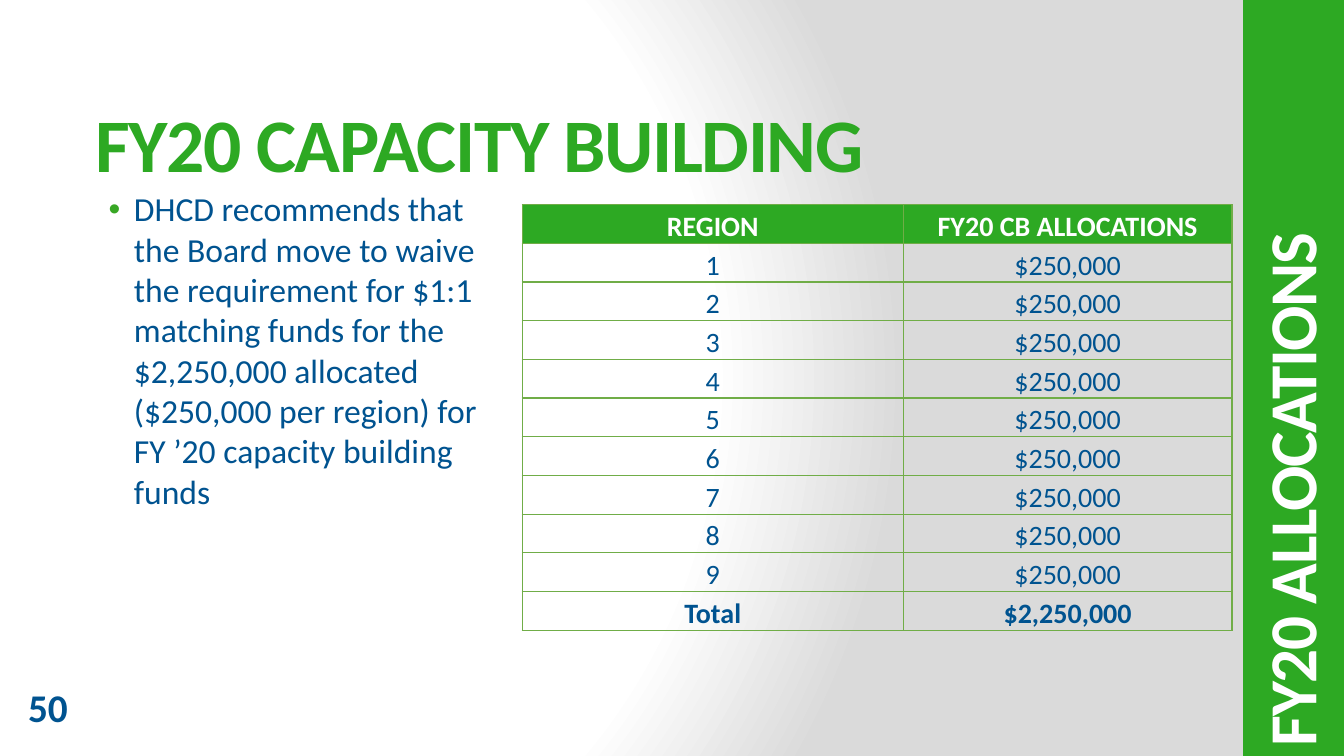
"""Build the FY20 capacity building allocations slide."""
from dataclasses import dataclass

from pptx import Presentation
from pptx.dml.color import RGBColor
from pptx.enum.shapes import MSO_SHAPE
from pptx.enum.text import MSO_ANCHOR as Anchor, PP_ALIGN as Align
from pptx.oxml import parse_xml
from pptx.oxml.ns import nsdecls
from pptx.slide import Slide
from pptx.table import _Cell as Cell
from pptx.util import Inches, Pt

GREEN, BLUE, WHITE = "2DA923", "005390", "FFFFFF"
BULLET_GREEN, BORDER_GREEN = "38A725", "70AD47"
BACKDROP_STOPS = ((0, WHITE), (75, WHITE), (100, "DADADA"))
REGIONS = 9
ALLOCATION = 250_000
COLUMN_WIDTHS = (3.78, 3.26)
ROW_HEIGHT = 0.36


@dataclass(frozen=True)
class Label:
    text: str
    left: float
    top: float
    width: float
    height: float
    size: float
    color: str
    bold: bool = True
    anchor: Anchor = Anchor.TOP
    rotation: float = 0
    spacing: float = 0
    bullet: str = ""


LABELS = (
    Label("50", 0.18, 6.73, 1.06, 0.57, 28, BLUE),
    Label("DHCD recommends that the Board move to waive the requirement for $1:1 "
          "matching funds for the $2,250,000 allocated ($250,000 per region) for "
          "FY ’20 capacity building funds",
          0.85, 1.82, 4.11, 4.63, 24, BLUE, bold=False, bullet="•"),
    Label("FY20 CAPACITY BUILDING", 0.85, 0.87, 11.49, 1.08, 54, GREEN,
          anchor=Anchor.MIDDLE, spacing=-1),
    Label("FY20 ALLOCATIONS", 9.04, 3.21, 7.5, 1.08, 48, WHITE,
          anchor=Anchor.MIDDLE, rotation=270, spacing=-1),
)


def rgb(color: str) -> RGBColor:
    return RGBColor.from_string(color)


def add_run(paragraph, text: str, size: float, color: str, bold: bool, spacing: float = 0) -> None:
    run = paragraph.add_run()
    run.text = text
    font = run.font
    font.name, font.size, font.bold = "Calibri", Pt(size), bold
    font.color.rgb = rgb(color)
    if spacing:
        run._r.get_or_add_rPr().set("spc", str(round(spacing * 100)))


def add_bullet(paragraph, mark: str) -> None:
    properties = paragraph._p.get_or_add_pPr()
    properties.set("marL", str(Inches(0.38)))
    properties.set("indent", str(Inches(-0.25)))
    for element in (f'<a:buClr {nsdecls("a")}><a:srgbClr val="{BULLET_GREEN}"/></a:buClr>',
                    f'<a:buFont {nsdecls("a")} typeface="Arial"/>',
                    f'<a:buChar {nsdecls("a")} char="{mark}"/>'):
        properties.append(parse_xml(element))


def add_label(slide: Slide, label: Label) -> None:
    box = slide.shapes.add_textbox(Inches(label.left), Inches(label.top),
                                   Inches(label.width), Inches(label.height))
    box.rotation = label.rotation
    frame = box.text_frame
    frame.word_wrap = True
    frame.vertical_anchor = label.anchor
    paragraph = frame.paragraphs[0]
    if label.bullet:
        add_bullet(paragraph, label.bullet)
    add_run(paragraph, label.text, label.size, label.color, label.bold, label.spacing)


def paint_backdrop(slide: Slide) -> None:
    slide.background.fill.solid()
    backdrop = slide.element.xpath("p:cSld/p:bg/p:bgPr")[0]
    stops = "".join(f'<a:gs pos="{position * 1000}"><a:srgbClr val="{color}"/></a:gs>'
                    for position, color in BACKDROP_STOPS)
    backdrop.replace(backdrop[0], parse_xml(
        f'<a:gradFill {nsdecls("a")} rotWithShape="1"><a:gsLst>{stops}</a:gsLst>'
        '<a:path path="circle"><a:fillToRect l="20000" t="50000" r="100000" b="50000"/></a:path>'
        '</a:gradFill>'))


def add_side_band(slide: Slide) -> None:
    band = slide.shapes.add_shape(MSO_SHAPE.RECTANGLE, Inches(12.33), 0, Inches(1), Inches(7.5))
    band.shadow.inherit = False
    band.fill.solid()
    band.fill.fore_color.rgb = rgb(GREEN)
    band.line.fill.background()


def add_borders(cell: Cell) -> None:
    properties = cell._tc.get_or_add_tcPr()
    for index, side in enumerate(("lnL", "lnR", "lnT", "lnB")):
        properties.insert(index, parse_xml(
            f'<a:{side} {nsdecls("a")} w="{Pt(1)}"><a:solidFill>'
            f'<a:srgbClr val="{BORDER_GREEN}"/></a:solidFill></a:{side}>'))


def fill_cell(cell: Cell, text: str, header: bool, bold: bool) -> None:
    cell.margin_left = cell.margin_right = Inches(0.07)
    cell.margin_top = cell.margin_bottom = 0
    cell.vertical_anchor = Anchor.BOTTOM
    if header:
        cell.fill.solid()
        cell.fill.fore_color.rgb = rgb(GREEN)
    else:
        cell.fill.background()
    add_borders(cell)
    paragraph = cell.text_frame.paragraphs[0]
    paragraph.alignment = Align.CENTER
    paragraph.line_spacing = 1.15
    add_run(paragraph, text, 20, WHITE if header else BLUE, bold)


def add_allocations(slide: Slide) -> None:
    rows = [("REGION", "FY20 CB ALLOCATIONS"),
            *((str(region), f"${ALLOCATION:,}") for region in range(1, REGIONS + 1)),
            ("Total", f"${ALLOCATION * REGIONS:,}")]
    table = slide.shapes.add_table(len(rows), len(COLUMN_WIDTHS), Inches(5.18), Inches(2.03),
                                   Inches(sum(COLUMN_WIDTHS)),
                                   Inches(ROW_HEIGHT * len(rows))).table
    table.horz_banding = False
    for column, width in zip(table.columns, COLUMN_WIDTHS):
        column.width = Inches(width)
    for row_index, row in enumerate(rows):
        header = row_index == 0
        bold = header or row_index == len(rows) - 1
        for column_index, text in enumerate(row):
            fill_cell(table.cell(row_index, column_index), text, header, bold)


def main() -> None:
    deck = Presentation()
    deck.slide_width, deck.slide_height = Inches(13.33), Inches(7.5)
    slide = deck.slides.add_slide(deck.slide_layouts[6])
    paint_backdrop(slide)
    add_side_band(slide)
    for label in LABELS:
        add_label(slide, label)
    add_allocations(slide)
    deck.save("out.pptx")


if __name__ == "__main__":
    main()
